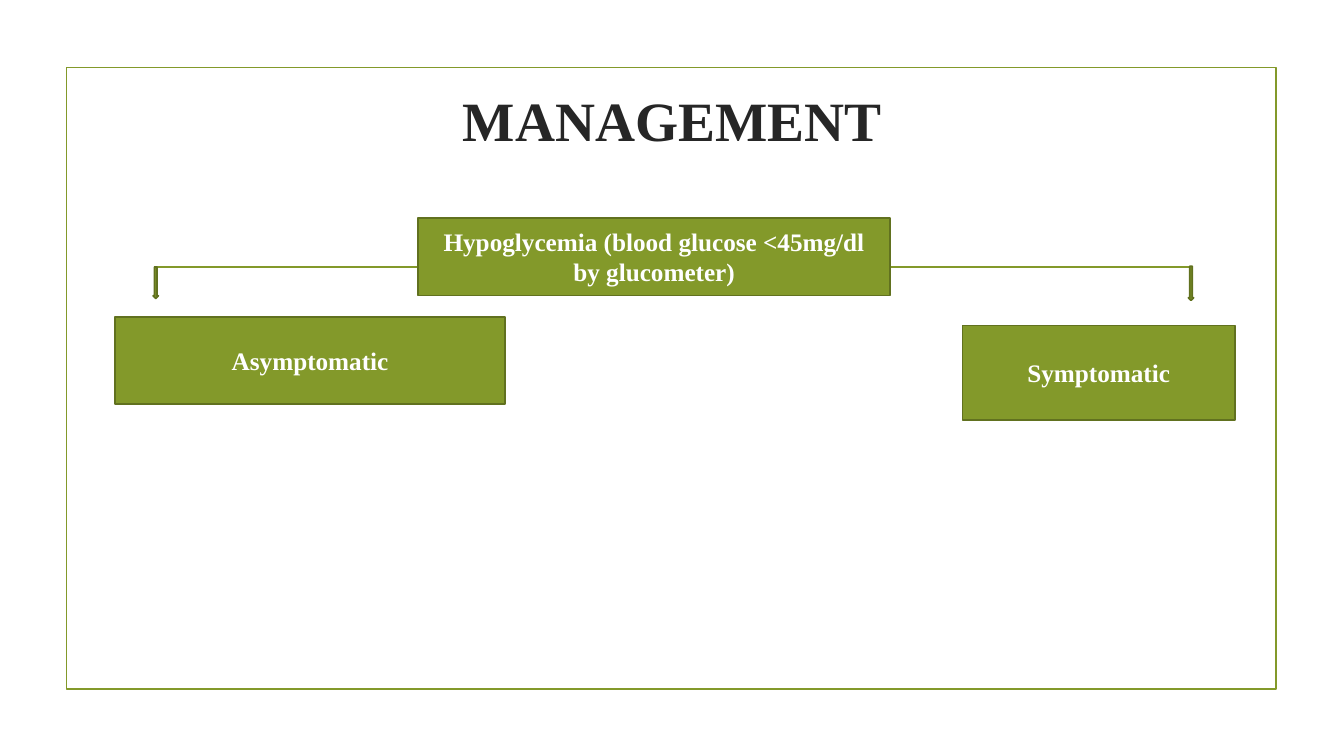
from pptx import Presentation
from pptx.dml.color import RGBColor
from pptx.enum.shapes import MSO_CONNECTOR, MSO_SHAPE as Preset
from pptx.enum.text import MSO_ANCHOR as Anchor, MSO_AUTO_SIZE as AutoSize, PP_ALIGN as Align
from pptx.oxml.ns import qn
from pptx.util import Cm, Pt
from lxml import etree

FONT = "Times New Roman"
GREEN, DARK_GREEN = "83992A", "61711F"
INK, WHITE = "262626", "FFFFFF"


def color(value):
    return RGBColor.from_string(value)


def write(frame, text, size=18, ink=WHITE, bold=True):
    frame.word_wrap = True
    frame.auto_size = AutoSize.NONE
    frame.vertical_anchor = Anchor.MIDDLE
    paragraph = frame.paragraphs[0]
    paragraph.alignment = Align.CENTER
    run = paragraph.add_run()
    run.text = text
    run.font.name = FONT
    run.font.size = Pt(size)
    run.font.bold = bold
    run.font.color.rgb = color(ink)


class FlowSlide:
    """Draws the elements of a green flow chart; lengths are in centimetres."""

    def __init__(self, slide, line_width=1.25):
        self.slide = slide
        self.line_width = Pt(line_width)

    def outline(self, line, ink):
        line.color.rgb = color(ink)
        line.width = self.line_width

    def title(self, text, left, top, width, height):
        heading = self.slide.shapes.title
        heading.left, heading.top = Cm(left), Cm(top)
        heading.width, heading.height = Cm(width), Cm(height)
        write(heading.text_frame, text, size=39.6, ink=INK)

    def shape(self, left, top, width, height, preset=Preset.RECTANGLE, fill=GREEN, edge=DARK_GREEN):
        shape = self.slide.shapes.add_shape(preset, Cm(left), Cm(top), Cm(width), Cm(height))
        shape.shadow.inherit = False
        if fill:
            shape.fill.solid()
            shape.fill.fore_color.rgb = color(fill)
        else:
            shape.fill.background()
        self.outline(shape.line, edge)
        return shape

    def box(self, text, left, top, width, height):
        write(self.shape(left, top, width, height).text_frame, text)

    def line(self, x1, y1, x2, y2):
        line = self.slide.shapes.add_connector(
            MSO_CONNECTOR.STRAIGHT, Cm(x1), Cm(y1), Cm(x2), Cm(y2))
        self.outline(line.line, GREEN)
        etree.SubElement(line._element.spPr, qn("a:effectLst"))


def main():
    deck = Presentation()
    deck.slide_width, deck.slide_height = Cm(33.87), Cm(19.05)
    flow = FlowSlide(deck.slides.add_slide(deck.slide_layouts[5]))

    # Frame and title
    flow.shape(1.68, 1.7, 30.48, 15.67, fill=None, edge=GREEN)
    flow.title("MANAGEMENT", 3.61, 2.11, 26.67, 1.8)

    # Crossbar, passing behind the diagnosis
    flow.line(3.89, 6.73, 30, 6.73)
    flow.box("Hypoglycemia (blood glucose <45mg/dl by glucometer)", 10.54, 5.49, 11.89, 1.96)

    # Arrows down to the two branches
    for left, top, height in [(3.86, 6.73, 0.79), (29.95, 6.71, 0.86)]:
        flow.shape(left, top, 0.13, height, preset=Preset.DOWN_ARROW)

    # Branches
    flow.box("Asymptomatic", 2.9, 7.98, 9.83, 2.21)
    flow.box("Symptomatic", 24.26, 8.2, 6.86, 2.39)

    deck.save("out.pptx")


if __name__ == "__main__":
    main()
